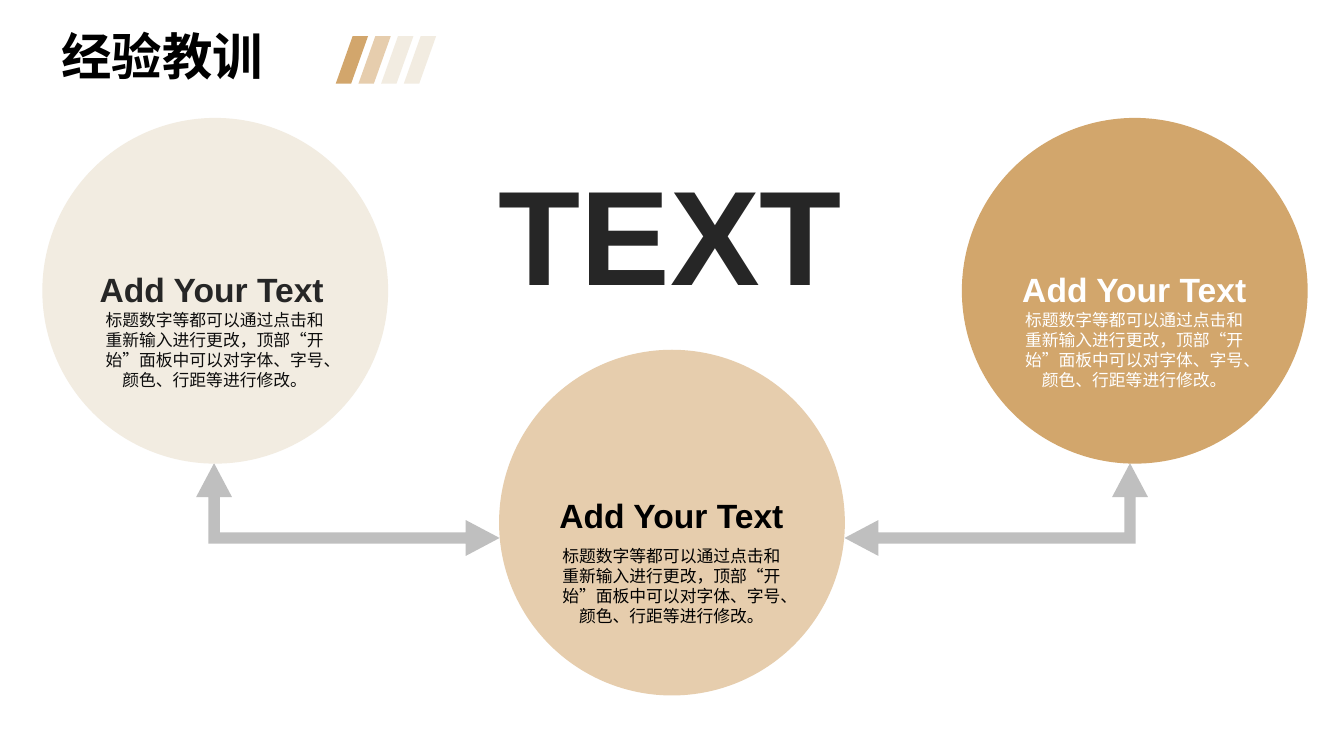
import dataclasses

import pptx
import pptx.dml.color
import pptx.enum.shapes
import pptx.enum.text
import pptx.oxml
import pptx.oxml.ns
import pptx.util

Inches = pptx.util.Inches
RGB = pptx.dml.color.RGBColor
Kind = pptx.enum.shapes.MSO_SHAPE
Align = pptx.enum.text.PP_ALIGN
Fit = pptx.enum.text.MSO_AUTO_SIZE

GOLD = RGB(0xD2, 0xA6, 0x6C)
SAND = RGB(0xE6, 0xCD, 0xAD)
CREAM = RGB(0xF2, 0xEC, 0xE1)
GREY = RGB(0xBF, 0xBF, 0xBF)
DARK = RGB(0x26, 0x26, 0x26)
INK = RGB(0x0D, 0x0D, 0x0D)
BLACK = RGB(0, 0, 0)
WHITE = RGB(0xFF, 0xFF, 0xFF)

LATIN = "Arial"
HAN = "Noto Sans CJK SC"
HEAD = "Add Your Text"
BODY = "标题数字等都可以通过点击和重新输入进行更改，顶部“开始”面板中可以对字体、字号、颜色、行距等进行修改。"


@dataclasses.dataclass(frozen=True)
class Box:
    left: float
    top: float
    width: float
    height: float

    def place(self) -> tuple:
        return tuple(map(Inches, (self.left, self.top, self.width, self.height)))


@dataclasses.dataclass(frozen=True)
class Style:
    size: int
    font: str
    color: RGB
    bold: bool = False


@dataclasses.dataclass(frozen=True)
class Circle:
    left: float
    top: float
    fill: RGB
    head: Box
    body: Box
    tint: RGB
    ink: RGB


@dataclasses.dataclass(frozen=True)
class Arrow:
    left: float
    turn: int
    flip: bool


CIRCLES = (
    Circle(0.42, 1.17, CREAM, Box(0.85, 2.62, 2.5, 0.5), Box(0.91, 3.02, 2.44, 0.91), DARK, INK),
    Circle(9.54, 1.17, GOLD, Box(10, 2.62, 2.5, 0.5), Box(10.03, 3.02, 2.44, 0.91), WHITE, WHITE),
    Circle(4.95, 3.47, SAND, Box(5.41, 4.86, 2.5, 0.5), Box(5.44, 5.36, 2.44, 0.91), BLACK, BLACK),
)
ARROWS = (Arrow(2.99, 90, False), Arrow(9.42, 270, True))


def draw(slide, kind: Kind, box: Box, fill: RGB, adjust: tuple = ()):
    shape = slide.shapes.add_shape(kind, *box.place())
    shape.shadow.inherit = False
    shape.fill.solid()
    shape.fill.fore_color.rgb = fill
    shape.line.fill.background()
    for index, value in enumerate(adjust):
        shape.adjustments[index] = value
    return shape


def write(shape, text: str, style: Style, align: Align, wrap: bool):
    frame = shape.text_frame
    frame.word_wrap = wrap
    frame.auto_size = Fit.SHAPE_TO_FIT_TEXT
    frame.vertical_anchor = pptx.enum.text.MSO_ANCHOR.TOP
    para = frame.paragraphs[0]
    para.alignment = align
    run = para.add_run()
    run.text = text
    run.font.size = pptx.util.Pt(style.size)
    run.font.name = style.font
    run.font.bold = style.bold
    run.font.color.rgb = style.color
    east = pptx.oxml.parse_xml(f'<a:ea {pptx.oxml.ns.nsdecls("a")} typeface="{HAN}"/>')
    run.font._element.find(pptx.oxml.ns.qn("a:latin")).addnext(east)
    return para


def label(slide, box: Box, text: str, style: Style, align: Align, wrap: bool) -> None:
    write(slide.shapes.add_textbox(*box.place()), text, style, align, wrap)


def title(slide) -> None:
    shape = slide.shapes.title
    shape.left, shape.top, shape.width, shape.height = Box(0.51, 0.27, 2.94, 0.65).place()
    para = write(shape, "经验教训", Style(36, LATIN, BLACK, True), Align.LEFT, True)
    para.line_spacing = 0.9
    para.space_before = pptx.util.Pt(10)


def main() -> None:
    deck = pptx.Presentation()
    deck.slide_width = Inches(13.33)
    deck.slide_height = Inches(7.5)
    slide = deck.slides.add_slide(deck.slide_layouts[5])
    title(slide)

    for index, fill in enumerate((GOLD, SAND, CREAM, CREAM)):
        stripe = Box(3.33 + 0.225 * index, 0.36, 0.32, 0.47)
        draw(slide, Kind.PARALLELOGRAM, stripe, fill, (0.522,))

    for arrow in ARROWS:
        box = Box(arrow.left, 3.55, 0.92, 3.01)
        shape = draw(slide, Kind.LEFT_UP_ARROW, box, GREY, (0.123, 0.193, 0.365))
        shape.rotation = arrow.turn
        if arrow.flip:
            shape._element.spPr.xfrm.set("flipH", "1")

    for item in CIRCLES:
        draw(slide, Kind.OVAL, Box(item.left, item.top, 3.43, 3.43), item.fill)
        label(slide, item.body, BODY, Style(12, HAN, item.ink), Align.CENTER, True)
        label(slide, item.head, HEAD, Style(24, LATIN, item.tint, True), Align.CENTER, False)

    label(slide, Box(4.85, 1.45, 3.64, 1.72), "TEXT", Style(96, LATIN, DARK, True), Align.LEFT, False)
    deck.save("out.pptx")


if __name__ == "__main__":
    main()
